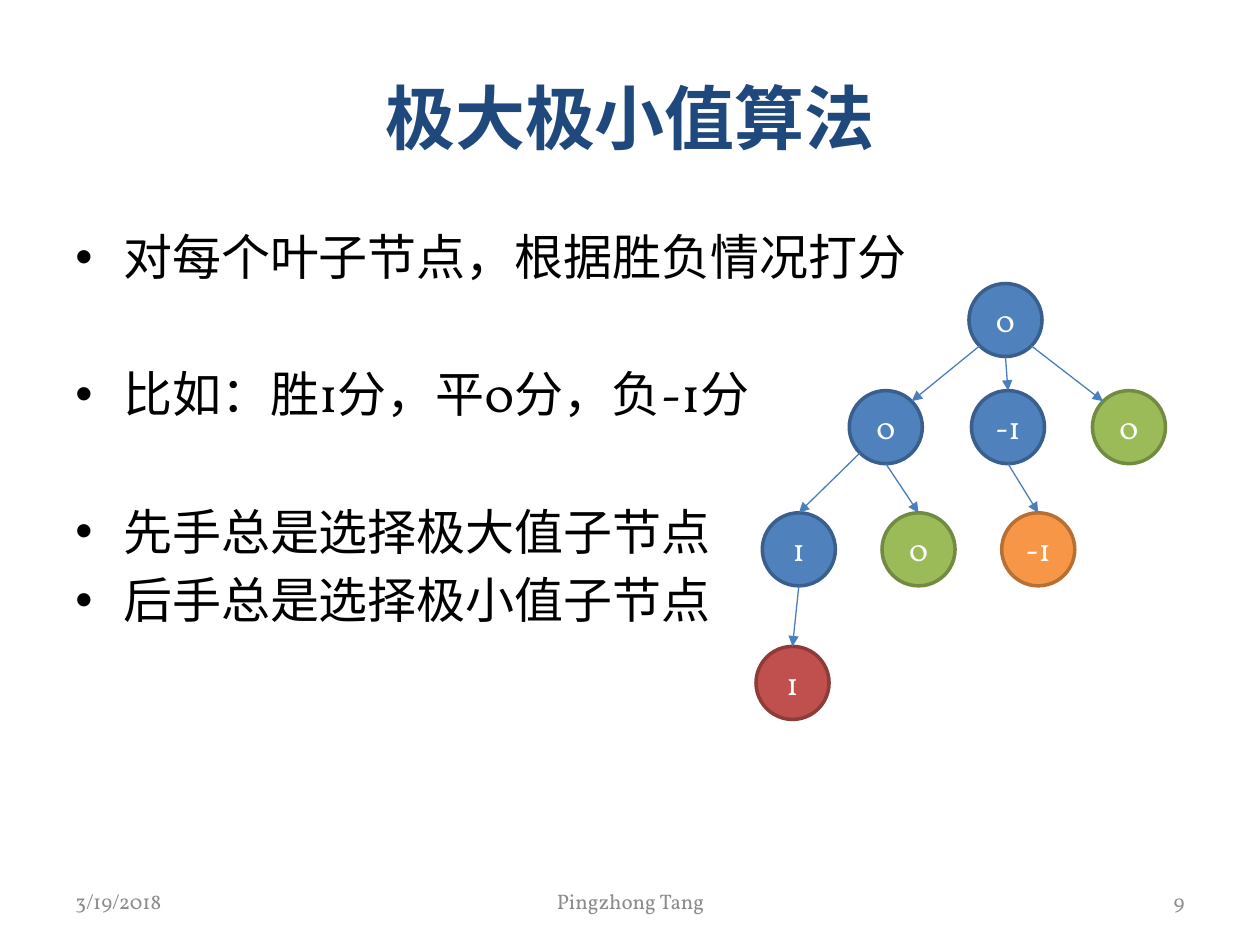
from dataclasses import dataclass
from enum import Enum

from lxml.etree import SubElement
from pptx import Presentation
from pptx.dml.color import RGBColor
from pptx.enum.lang import MSO_LANGUAGE_ID
from pptx.enum.shapes import MSO_CONNECTOR, MSO_SHAPE
from pptx.enum.text import MSO_ANCHOR, PP_ALIGN
from pptx.oxml.ns import qn
from pptx.slide import Slide
from pptx.text.text import TextFrame, _Paragraph
from pptx.util import Inches, Pt


@dataclass(frozen=True)
class Theme:
    font: str = "Vollkorn"
    title: str = "1F497D"
    body: str = "000000"
    footer: str = "8C8C8C"
    node_text: str = "FFFFFF"
    edge: str = "4B7EBC"
    title_size: float = 40
    body_size: float = 28
    node_size: float = 18
    footer_size: float = 12
    node_border: float = 2
    edge_width: float = 0.75


class Palette(Enum):
    BLUE = ("4F81BD", "3A5F8C")
    GREEN = ("9BBB59", "738A42")
    ORANGE = ("F79646", "B76F34")
    RED = ("C0504D", "8E3B39")


class Site(Enum):
    TOP = (0, -1)
    BOTTOM = (0, 1)
    TOP_LEFT = (-0.71, -0.71)
    TOP_RIGHT = (0.71, -0.71)
    BOTTOM_LEFT = (-0.71, 0.71)
    BOTTOM_RIGHT = (0.71, 0.71)


@dataclass(frozen=True)
class Node:
    score: str
    left: float
    top: float
    palette: Palette = Palette.BLUE

    def site(self, site: Site) -> tuple[float, float]:
        dx, dy = site.value
        radius = DIAMETER / 2
        return self.left + radius * (1 + dx), self.top + radius * (1 + dy)


@dataclass(frozen=True)
class Edge:
    parent: Node
    child: Node
    leaves: Site = Site.BOTTOM
    enters: Site = Site.TOP


@dataclass(frozen=True)
class Label:
    text: str
    left: float
    top: float
    width: float
    height: float
    size: float
    color: str
    align: PP_ALIGN
    bold: bool = False


@dataclass(frozen=True)
class Bullet:
    text: str
    space_before: float


THEME = Theme()
DIAMETER = 0.58
INDENT = 0.38
LINE_GAP = 5.6
SECTION_GAP = 44.8
LEVEL_2, LEVEL_3, LEVEL_4 = 3.1, 4.07, 5.13

root = Node("0", 7.69, 2.25)
left_move = Node("0", 6.74, LEVEL_2)
middle_move = Node("-1", 7.71, LEVEL_2)
right_draw = Node("0", 8.67, LEVEL_2, Palette.GREEN)
left_reply = Node("1", 6.05, LEVEL_3)
left_draw = Node("0", 7, LEVEL_3, Palette.GREEN)
middle_loss = Node("-1", 7.95, LEVEL_3, Palette.ORANGE)
left_win = Node("1", 6, LEVEL_4, Palette.RED)
NODES = [root, left_move, middle_move, right_draw,
         left_reply, left_draw, middle_loss, left_win]

EDGES = [
    Edge(root, left_move, Site.BOTTOM_LEFT, Site.TOP_RIGHT),
    Edge(root, middle_move),
    Edge(root, right_draw, Site.BOTTOM_RIGHT, Site.TOP_LEFT),
    Edge(left_move, left_reply, Site.BOTTOM_LEFT),
    Edge(left_move, left_draw),
    Edge(middle_move, middle_loss),
    Edge(left_reply, left_win),
]

BULLETS = [
    Bullet("对每个叶子节点，根据胜负情况打分", LINE_GAP),
    Bullet("比如：胜1分，平0分，负-1分", SECTION_GAP),
    Bullet("先手总是选择极大值子节点", SECTION_GAP),
    Bullet("后手总是选择极小值子节点", LINE_GAP),
]

LABELS = [
    Label("极大极小值算法", 0.5, 0.3, 9, 1.25,
          THEME.title_size, THEME.title, PP_ALIGN.CENTER, True),
    Label("3/19/2018", 0.5, 6.95, 2.33, 0.4,
          THEME.footer_size, THEME.footer, PP_ALIGN.LEFT),
    Label("Pingzhong Tang", 3.42, 6.95, 3.17, 0.4,
          THEME.footer_size, THEME.footer, PP_ALIGN.CENTER),
    Label("9", 7.17, 6.95, 2.33, 0.4,
          THEME.footer_size, THEME.footer, PP_ALIGN.RIGHT),
]


def format_runs(paragraph: _Paragraph, size: float, color: str, bold: bool = False) -> None:
    for run in paragraph.runs:
        run.font.name = THEME.font
        run.font.size = Pt(size)
        run.font.bold = bold
        run.font.color.rgb = RGBColor.from_string(color)
        run.font.language_id = MSO_LANGUAGE_ID.SIMPLIFIED_CHINESE
        SubElement(run.font._element, qn("a:ea"), typeface=THEME.font)


def add_frame(slide: Slide, left: float, top: float, width: float, height: float) -> TextFrame:
    frame = slide.shapes.add_textbox(
        Inches(left), Inches(top), Inches(width), Inches(height)).text_frame
    frame.word_wrap = True
    return frame


def add_label(slide: Slide, label: Label) -> None:
    frame = add_frame(slide, label.left, label.top, label.width, label.height)
    frame.vertical_anchor = MSO_ANCHOR.MIDDLE
    frame.text = label.text
    paragraph = frame.paragraphs[0]
    paragraph.alignment = label.align
    format_runs(paragraph, label.size, label.color, label.bold)


def add_bullets(slide: Slide, bullets: list[Bullet]) -> None:
    frame = add_frame(slide, 0.5, 1.75, 9, 4.95)
    frame.text = "\n".join(bullet.text for bullet in bullets)
    for paragraph, bullet in zip(frame.paragraphs, bullets):
        paragraph.space_before = Pt(bullet.space_before)
        properties = paragraph._p.get_or_add_pPr()
        properties.set("marL", str(Inches(INDENT)))
        properties.set("indent", str(-Inches(INDENT)))
        SubElement(properties, qn("a:buFont"), typeface="Arial")
        SubElement(properties, qn("a:buChar"), char="•")
        format_runs(paragraph, THEME.body_size, THEME.body)


def add_node(slide: Slide, node: Node) -> None:
    circle = slide.shapes.add_shape(
        MSO_SHAPE.OVAL, Inches(node.left), Inches(node.top), Inches(DIAMETER), Inches(DIAMETER))
    fill, border = node.palette.value
    circle.shadow.inherit = False
    circle.fill.solid()
    circle.fill.fore_color.rgb = RGBColor.from_string(fill)
    circle.line.color.rgb = RGBColor.from_string(border)
    circle.line.width = Pt(THEME.node_border)
    frame = circle.text_frame
    frame.word_wrap = False
    frame.vertical_anchor = MSO_ANCHOR.MIDDLE
    frame.text = node.score
    frame.paragraphs[0].alignment = PP_ALIGN.CENTER
    format_runs(frame.paragraphs[0], THEME.node_size, THEME.node_text)


def add_edge(slide: Slide, edge: Edge) -> None:
    ends = edge.parent.site(edge.leaves) + edge.child.site(edge.enters)
    arrow = slide.shapes.add_connector(MSO_CONNECTOR.STRAIGHT, *map(Inches, ends))
    arrow.line.color.rgb = RGBColor.from_string(THEME.edge)
    arrow.line.width = Pt(THEME.edge_width)
    SubElement(arrow.line._get_or_add_ln(), qn("a:tailEnd"), type="triangle")
    SubElement(arrow._element.spPr, qn("a:effectLst"))


def main() -> None:
    deck = Presentation()
    deck.slide_width, deck.slide_height = Inches(10), Inches(7.5)
    slide = deck.slides.add_slide(deck.slide_layouts[6])
    add_bullets(slide, BULLETS)
    for label in LABELS:
        add_label(slide, label)
    for node in NODES:
        add_node(slide, node)
    for edge in EDGES:
        add_edge(slide, edge)
    deck.save("out.pptx")


if __name__ == "__main__":
    main()
